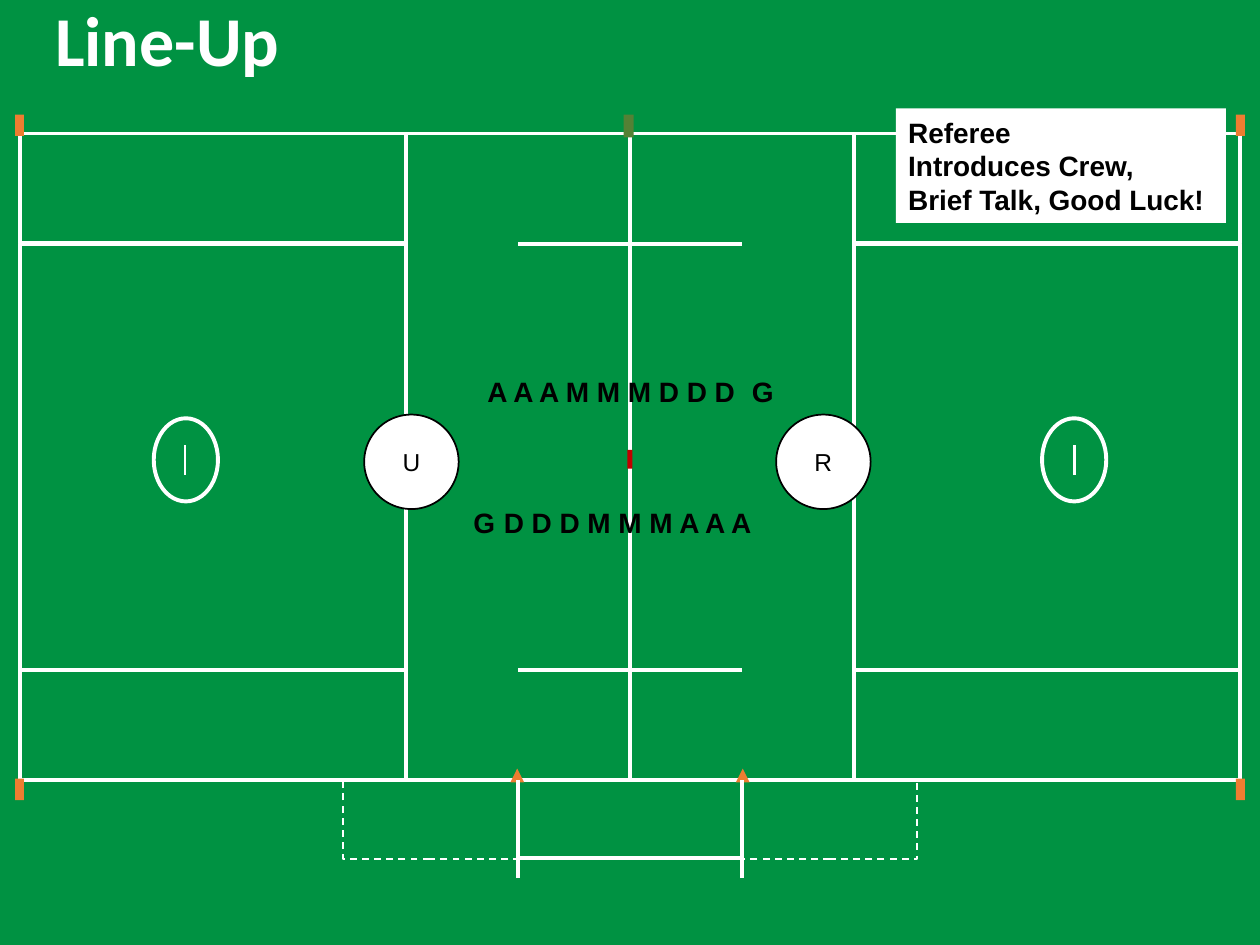
from dataclasses import dataclass
from typing import Optional

from lxml.etree import SubElement
from pptx import Presentation
from pptx.dml.color import RGBColor
from pptx.enum.dml import MSO_LINE
from pptx.enum.shapes import MSO_CONNECTOR, MSO_SHAPE
from pptx.enum.text import MSO_ANCHOR, PP_ALIGN
from pptx.oxml.ns import qn
from pptx.util import Inches, Pt

GRASS = RGBColor(0x00, 0x92, 0x42)
WHITE = RGBColor(0xFF, 0xFF, 0xFF)
BLACK = RGBColor(0x00, 0x00, 0x00)
ORANGE = RGBColor(0xED, 0x7D, 0x31)
DARK_GREEN = RGBColor(0x54, 0x81, 0x35)
RED = RGBColor(0xC0, 0x00, 0x00)
FIELD_WIDTH = 10
RECT, OVAL, CONE = MSO_SHAPE.RECTANGLE, MSO_SHAPE.OVAL, MSO_SHAPE.ISOSCELES_TRIANGLE


@dataclass(frozen=True)
class Mark:
    """A shape on the field, in inches."""
    left: float
    top: float
    width: float
    height: float
    kind: MSO_SHAPE = RECT
    fill: Optional[RGBColor] = None
    line: Optional[RGBColor] = None
    weight: float = 2.25
    dashed: bool = False

    def mirrored(self):
        """Return the left edge of this mark in the other half."""
        return FIELD_WIDTH - self.left - self.width


@dataclass(frozen=True)
class Stripe:
    """A straight line on the field, in inches."""
    x1: float
    y1: float
    x2: float
    y2: float
    weight: float = 2.25


@dataclass(frozen=True)
class Label:
    """Bold text without a frame, in inches."""
    text: str
    left: float
    top: float
    width: float


MIDFIELD = Mark(3.22, 1.06, 1.78, 5.13, line=WHITE)
HALF_MARKS = [
    Mark(0.16, 1.06, 3.06, 0.87, line=WHITE),
    Mark(0.16, 5.32, 3.06, 0.87, line=WHITE),
    Mark(0.16, 1.94, 3.06, 3.38, line=WHITE),
    Mark(0.12, 0.91, 0.07, 0.17, fill=ORANGE),
    Mark(0.12, 6.18, 0.07, 0.17, fill=ORANGE),
    Mark(2.72, 6.2, 1.38, 0.62, line=WHITE, weight=1, dashed=True),
    Mark(4.05, 6.1, 0.11, 0.11, kind=CONE, fill=ORANGE),
    Mark(1.22, 3.32, 0.51, 0.66, kind=OVAL, line=WHITE),
]
GOAL_LINE = Stripe(1.47, 3.77, 1.47, 3.53, 1.5)
HALF_STRIPES = [GOAL_LINE] + [Stripe(5, y, 4.11, y) for y in (5.32, 1.94, 6.81)]
GATE_LINE = Stripe(4.11, 6.97, 4.11, 6.19)
CENTER_MARKS = [
    Mark(4.95, 0.91, 0.08, 0.18, fill=DARK_GREEN),
    Mark(4.98, 3.57, 0.04, 0.15, fill=RED),
]
OFFICIALS = {"U": 2.89, "R": 6.16}
PLAYERS = [
    Label("A A A M M M D D D", 3.77, 2.92, 2.29),
    Label("D D D M M M A A A", 3.9, 3.96, 2.35),
    Label("G", 3.66, 3.96, 0.36),
    Label("G", 5.87, 2.92, 0.36),
]


def draw_mark(slide, mark: Mark, mirror: bool = False):
    """Draw a mark, in the right half if mirrored."""
    left = mark.mirrored() if mirror else mark.left
    shape = slide.shapes.add_shape(mark.kind, Inches(left), Inches(mark.top),
                                   Inches(mark.width), Inches(mark.height))
    shape.shadow.inherit = False
    if mark.fill is None:
        shape.fill.background()
    else:
        shape.fill.solid()
        shape.fill.fore_color.rgb = mark.fill
    if mark.line is None:
        shape.line.fill.background()
    else:
        shape.line.color.rgb = mark.line
        shape.line.width = Pt(mark.weight)
    if mark.dashed:
        shape.line.dash_style = MSO_LINE.DASH
    return shape


def draw_stripe(slide, stripe: Stripe, mirror: bool = False):
    """Draw a white line, in the right half if mirrored."""
    x1, x2 = ((FIELD_WIDTH - x if mirror else x) for x in (stripe.x1, stripe.x2))
    connector = slide.shapes.add_connector(
        MSO_CONNECTOR.STRAIGHT, Inches(x1), Inches(stripe.y1), Inches(x2), Inches(stripe.y2))
    connector.line.color.rgb = WHITE
    connector.line.width = Pt(stripe.weight)
    SubElement(connector._element.spPr, qn("a:effectLst"))
    return connector


def write(shape, text: str, *, size: float = 16, color: RGBColor = BLACK, bold: bool = True,
          font: str = "Arial", align=PP_ALIGN.LEFT, anchor=MSO_ANCHOR.MIDDLE,
          spacing: float = 1.0) -> None:
    """Put formatted text into a shape."""
    frame = shape.text_frame
    frame.word_wrap = True
    frame.vertical_anchor = anchor
    frame.text = text
    for paragraph in frame.paragraphs:
        paragraph.alignment = align
        paragraph.line_spacing = spacing
        for run in paragraph.runs:
            run.font.name = font
            run.font.size = Pt(size)
            run.font.bold = bold
            run.font.color.rgb = color


def draw_half(slide, mirror: bool) -> None:
    """Draw the markings of one half of the field."""
    midfield = draw_mark(slide, MIDFIELD, mirror)
    for mark in HALF_MARKS:
        draw_mark(slide, mark, mirror)
    for stripe in HALF_STRIPES:
        draw_stripe(slide, stripe, mirror)
    draw_stripe(slide, GATE_LINE, mirror).end_connect(midfield, 2)


def main() -> None:
    """Build the line-up slide."""
    deck = Presentation()
    deck.slide_width, deck.slide_height = Inches(FIELD_WIDTH), Inches(7.5)
    slide = deck.slides.add_slide(deck.slide_layouts[6])
    slide.background.fill.solid()
    slide.background.fill.fore_color.rgb = GRASS

    for mirror in (False, True):
        draw_half(slide, mirror)
    for mark in CENTER_MARKS:
        draw_mark(slide, mark)

    title = slide.shapes.add_textbox(Inches(0.34), Inches(0.23), Inches(2.68), Inches(0.24))
    write(title, "Line-Up", size=40, color=WHITE, font="Calibri", spacing=0.9)

    for letter, left in OFFICIALS.items():
        official = draw_mark(slide, Mark(left, 3.29, 0.75, 0.75, OVAL, WHITE, BLACK, 1))
        write(official, letter, size=14, bold=False, align=PP_ALIGN.CENTER)

    briefing = draw_mark(slide, Mark(7.11, 0.86, 2.62, 0.91, fill=WHITE))
    write(briefing, "Referee\nIntroduces Crew,\vBrief Talk, Good Luck!")

    for label in PLAYERS:
        row = slide.shapes.add_textbox(Inches(label.left), Inches(label.top),
                                       Inches(label.width), Inches(0.37))
        write(row, label.text, anchor=MSO_ANCHOR.TOP)

    deck.save("out.pptx")


if __name__ == "__main__":
    main()
